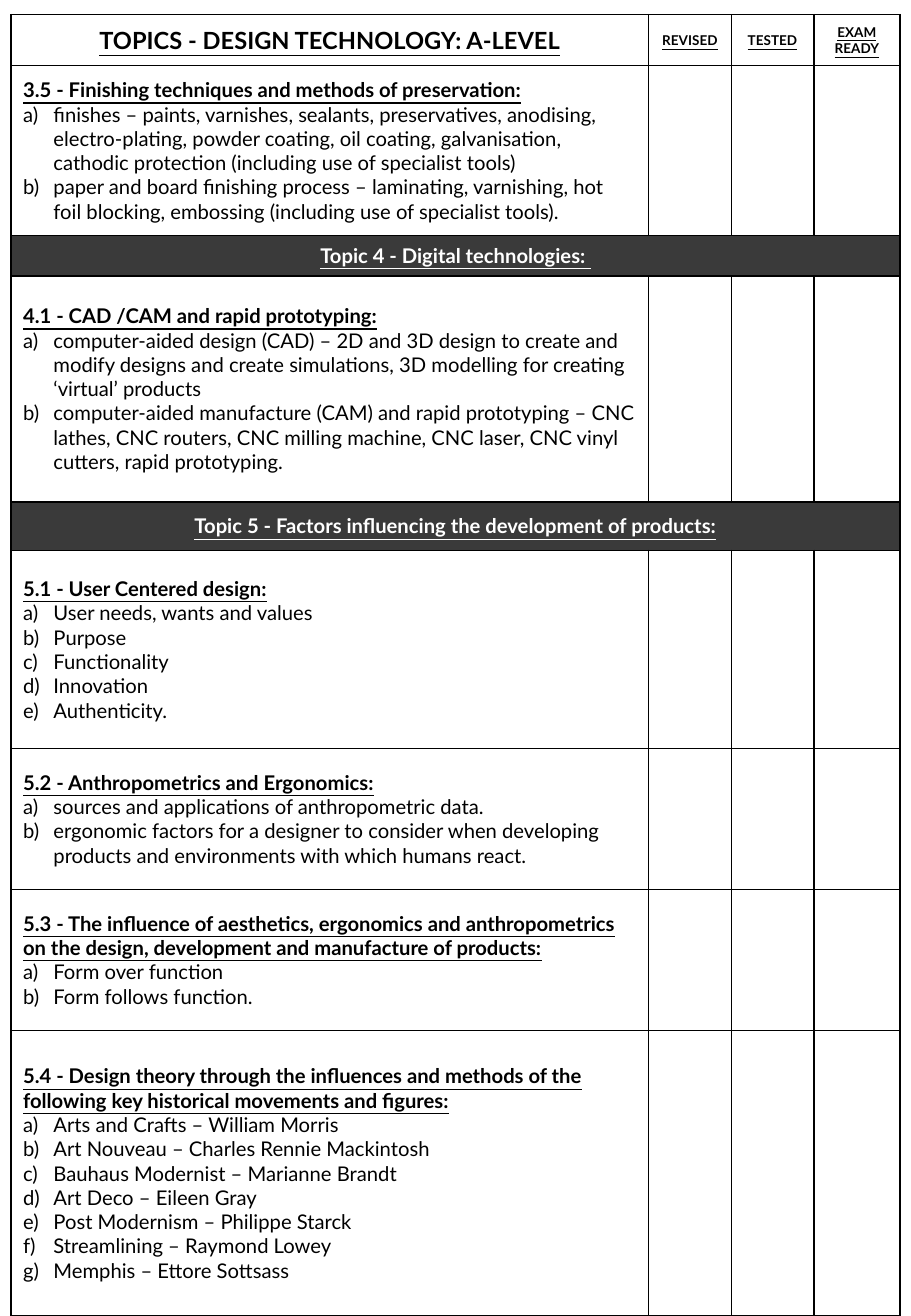
from lxml import etree
from pptx import Presentation
from pptx.dml.color import RGBColor
from pptx.enum.text import MSO_ANCHOR, PP_ALIGN
from pptx.oxml.ns import qn
from pptx.util import Inches, Pt

MIDDLE = MSO_ANCHOR.MIDDLE
LEFT, CENTER = PP_ALIGN.LEFT, PP_ALIGN.CENTER
BLACK = RGBColor(0x00, 0x00, 0x00)
WHITE = RGBColor(0xFF, 0xFF, 0xFF)
CHARCOAL = RGBColor(0x3A, 0x3A, 0x3A)
FONT = "Lato"

COLUMN_WIDTHS = [5.25, 0.68, 0.68, 0.71]
HEADINGS = ["TOPICS - DESIGN TECHNOLOGY: A-LEVEL", "REVISED", "TESTED", "EXAM READY"]
HEADING_HEIGHT = 0.42

# Row height, heading, lettered points; a row without points is a topic band.
ROWS = [
    (1.4, "3.5 - Finishing techniques and methods of preservation:", [
        "finishes – paints, varnishes, sealants, preservatives, anodising, "
        "electro-plating, powder coating, oil coating, galvanisation, "
        "cathodic protection (including use of specialist tools)",
        "paper and board finishing process – laminating, varnishing, hot "
        "foil blocking, embossing (including use of specialist tools)."]),
    (0.33, "Topic 4 - Digital technologies: ", []),
    (1.86, "4.1 - CAD /CAM and rapid prototyping:", [
        "computer-aided design (CAD) – 2D and 3D design to create and modify "
        "designs and create simulations, 3D modelling for creating "
        "‘virtual’ products",
        "computer-aided manufacture (CAM) and rapid prototyping – CNC lathes, "
        "CNC routers, CNC milling machine, CNC laser, CNC vinyl cutters, "
        "rapid prototyping."]),
    (0.4, "Topic 5 - Factors influencing the development of products:", []),
    (1.63, "5.1 - User Centered design:", [
        "User needs, wants and values", "Purpose", "Functionality",
        "Innovation", "Authenticity."]),
    (1.16, "5.2 - Anthropometrics and Ergonomics:", [
        "sources and applications of anthropometric data.",
        "ergonomic factors for a designer to consider when developing "
        "products and environments with which humans react."]),
    (1.16, "5.3 - The influence of aesthetics, ergonomics and anthropometrics "
           "on the design, development and manufacture of products:", [
        "Form over function", "Form follows function."]),
    (2.35, "5.4 - Design theory through the influences and methods of the "
           "following key historical movements and figures:", [
        "Arts and Crafts – William Morris",
        "Art Nouveau – Charles Rennie Mackintosh",
        "Bauhaus Modernist – Marianne Brandt",
        "Art Deco – Eileen Gray",
        "Post Modernism – Philippe Starck",
        "Streamlining – Raymond Lowey",
        "Memphis – Ettore Sottsass"]),
]


def style_cell(cell, fill):
    tc_pr = cell._tc.get_or_add_tcPr()
    for side in ("lnL", "lnR", "lnT", "lnB"):
        ln = etree.SubElement(tc_pr, qn(f"a:{side}"), w=str(Pt(1)))
        solid = etree.SubElement(ln, qn("a:solidFill"))
        etree.SubElement(solid, qn("a:srgbClr"), val=str(BLACK))
    cell.fill.solid()
    cell.fill.fore_color.rgb = fill
    cell.vertical_anchor = MIDDLE
    cell.text_frame.paragraphs[0].font.size = Pt(12)


def write(p, text, size=12, color=BLACK, heading=True, align=LEFT):
    p.text = text
    p.alignment = align
    p.font.name = FONT
    p.font.size = Pt(size)
    p.font.bold = p.font.underline = heading
    p.font.color.rgb = color


def letter(p):
    """Number the paragraph a), b), c) with a hanging indent."""
    p_pr = p._p.get_or_add_pPr()
    p_pr.set("marL", str(Inches(0.25)))
    p_pr.set("indent", str(-Inches(0.25)))
    number = etree.Element(qn("a:buAutoNum"), type="alphaLcParenR")
    p_pr.insert(0, number)


def add_checklist(s, left, top, width):
    heights = [HEADING_HEIGHT] + [row[0] for row in ROWS]
    frame = s.shapes.add_table(len(heights), len(COLUMN_WIDTHS), Inches(left),
                               Inches(top), Inches(width), Inches(sum(heights)))
    table = frame.table
    table.first_row = table.horz_banding = False
    for column, column_width in zip(table.columns, COLUMN_WIDTHS):
        column.width = Inches(column_width)
    for row, height in zip(table.rows, heights):
        row.height = Inches(height)

    for i, heading in enumerate(HEADINGS):
        cell = table.cell(0, i)
        style_cell(cell, WHITE)
        write(cell.text_frame.paragraphs[0], heading, 8 if i else 14, align=CENTER)

    for i, (_, heading, points) in enumerate(ROWS, 1):
        for cell in table.rows[i].cells:
            style_cell(cell, WHITE if points else CHARCOAL)
        first = table.cell(i, 0)
        tf = first.text_frame
        if points:
            write(tf.paragraphs[0], heading)
        else:
            first.merge(table.cell(i, len(COLUMN_WIDTHS) - 1))
            write(tf.paragraphs[0], heading, color=WHITE, align=CENTER)
        for point in points:
            p = tf.add_paragraph()
            write(p, point, heading=False)
            letter(p)


def main():
    prs = Presentation()
    prs.slide_width, prs.slide_height = Inches(7.5), Inches(10.83)
    s = prs.slides.add_slide(prs.slide_layouts[6])
    add_checklist(s, 0.09, 0.12, sum(COLUMN_WIDTHS))
    prs.save("out.pptx")


if __name__ == "__main__":
    main()
